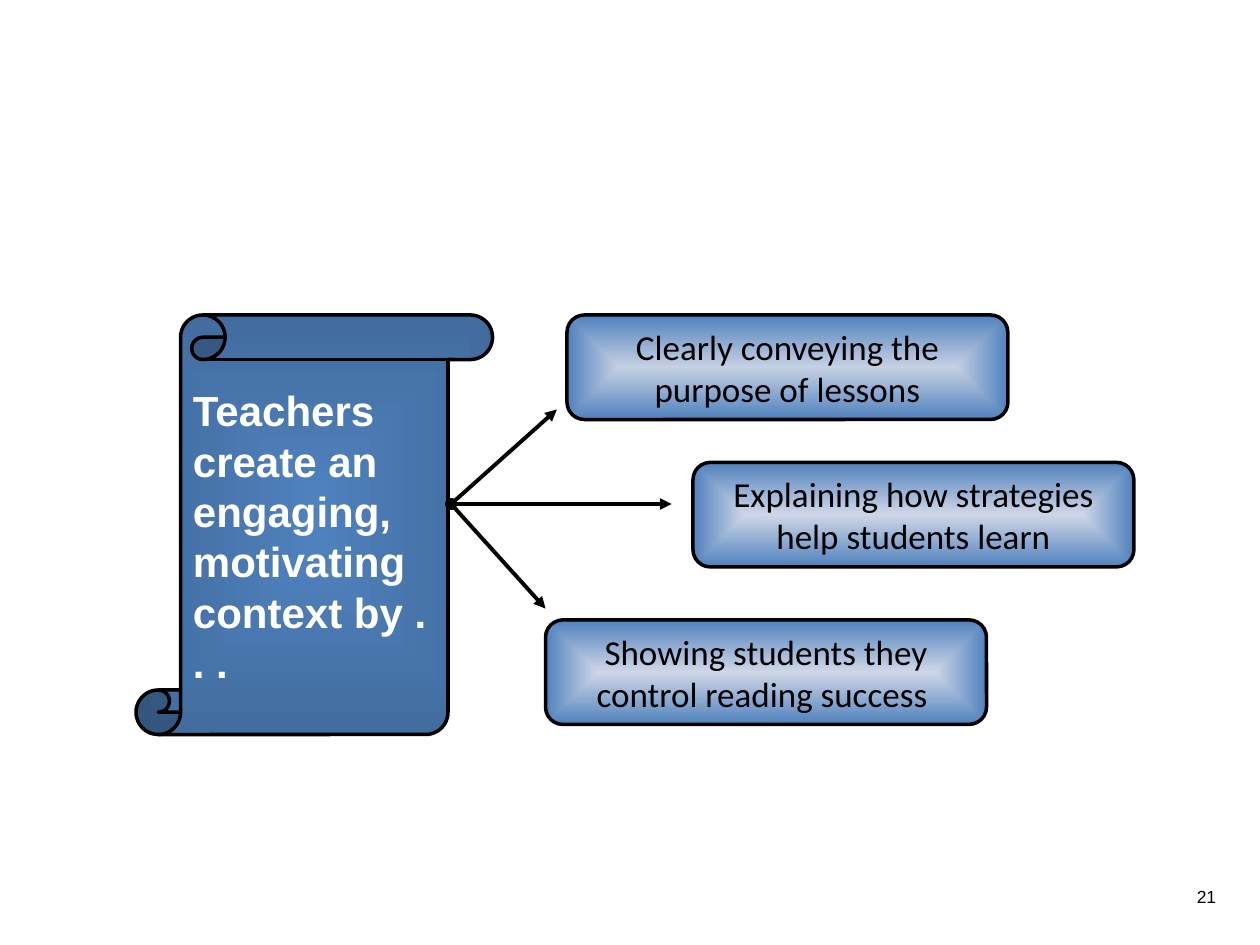
from pptx import Presentation
from pptx.dml.color import RGBColor
from pptx.enum.shapes import MSO_CONNECTOR as Connector, MSO_SHAPE as Shape
from pptx.enum.text import MSO_ANCHOR as Anchor, PP_ALIGN as Align
from pptx.oxml import parse_xml
from pptx.oxml.ns import nsdecls
from pptx.util import Inches, Pt

BLACK, WHITE, BLUE, DARK_BLUE = "000000", "FFFFFF", "4F81BD", "426C9E"
SCROLL_TEXT = "Teachers create an engaging, motivating context by . . . "
SCROLL_AREA = (1.08, 2.5, 2.83, 3.33)
PRACTICE_SIZE = (3.5, 0.83)
PRACTICES = [
    ("Clearly conveying the purpose of lessons", (4.5, 2.5), "C6D0E3", (4.42, 3.25)),
    ("Explaining how strategies help students learn", (5.5, 3.67), "CFD7E7", (5.33, 4)),
    ("Showing students they control reading success ", (4.33, 4.92), "CFD7E7", (4.33, 4.83)),
]
ARROW_START = (3.58, 4)
PAGE_NUMBER = "21"
PAGE_NUMBER_AREA = (9.33, 6.98, 0.42, 0.27)


def color(value):
    return RGBColor.from_string(value)


def inches(lengths):
    return [Inches(length) for length in lengths]


def write(box, text, size, font, ink, align, bold=False):
    frame = box.text_frame
    frame.word_wrap = True
    frame.text = text
    para = frame.paragraphs[0]
    para.alignment = align
    span = para.runs[0]
    span.font.size, span.font.name, span.font.bold = Pt(size), font, bold
    span.font.color.rgb = color(ink)


def outline(item, width):
    item.line.color.rgb = color(BLACK)
    item.line.width = Pt(width)


def add_panel(page, kind, area, center, edge, gradient_path):
    panel = page.shapes.add_shape(kind, *inches(area))
    panel.shadow.inherit = False
    panel.fill.gradient()
    for stop, value in zip(panel.fill.gradient_stops, (center, edge)):
        stop.color.rgb = color(value)
    gradient = panel.element.spPr.find(".//{*}gradFill")
    gradient.replace(gradient.find("{*}lin"), parse_xml(
        f'<a:path {nsdecls("a")} path="{gradient_path}">'
        '<a:fillToRect l="50000" t="50000" r="50000" b="50000"/></a:path>'))
    outline(panel, 2)
    panel.text_frame.vertical_anchor = Anchor.MIDDLE
    return panel


def add_arrow(page, start, end):
    arrow = page.shapes.add_connector(Connector.STRAIGHT, *inches(start + end))
    outline(arrow, 2.25)
    for tag, kind in (("headEnd", "oval"), ("tailEnd", "triangle")):
        arrow.line._get_or_add_ln().append(
            parse_xml(f'<a:{tag} {nsdecls("a")} type="{kind}"/>'))
    arrow.element.spPr.append(parse_xml(f'<a:effectLst {nsdecls("a")}/>'))


def main():
    deck = Presentation()
    deck.slide_width, deck.slide_height = inches((10, 7.5))
    page = deck.slides.add_slide(deck.slide_layouts[6])

    number = page.shapes.add_textbox(*inches(PAGE_NUMBER_AREA))
    write(number, PAGE_NUMBER, 10, "Arial", BLACK, Align.RIGHT)

    scroll = add_panel(page, Shape.VERTICAL_SCROLL, SCROLL_AREA, BLUE, DARK_BLUE, "rect")
    write(scroll, SCROLL_TEXT, 24, "Arial", WHITE, Align.LEFT, bold=True)

    for text, corner, center, _ in PRACTICES:
        panel = add_panel(page, Shape.ROUNDED_RECTANGLE, corner + PRACTICE_SIZE,
                          center, BLUE, "shape")
        write(panel, text, 20, "Calibri", BLACK, Align.CENTER)

    for *_, arrow_end in PRACTICES:
        add_arrow(page, ARROW_START, arrow_end)

    deck.save("out.pptx")


if __name__ == "__main__":
    main()
